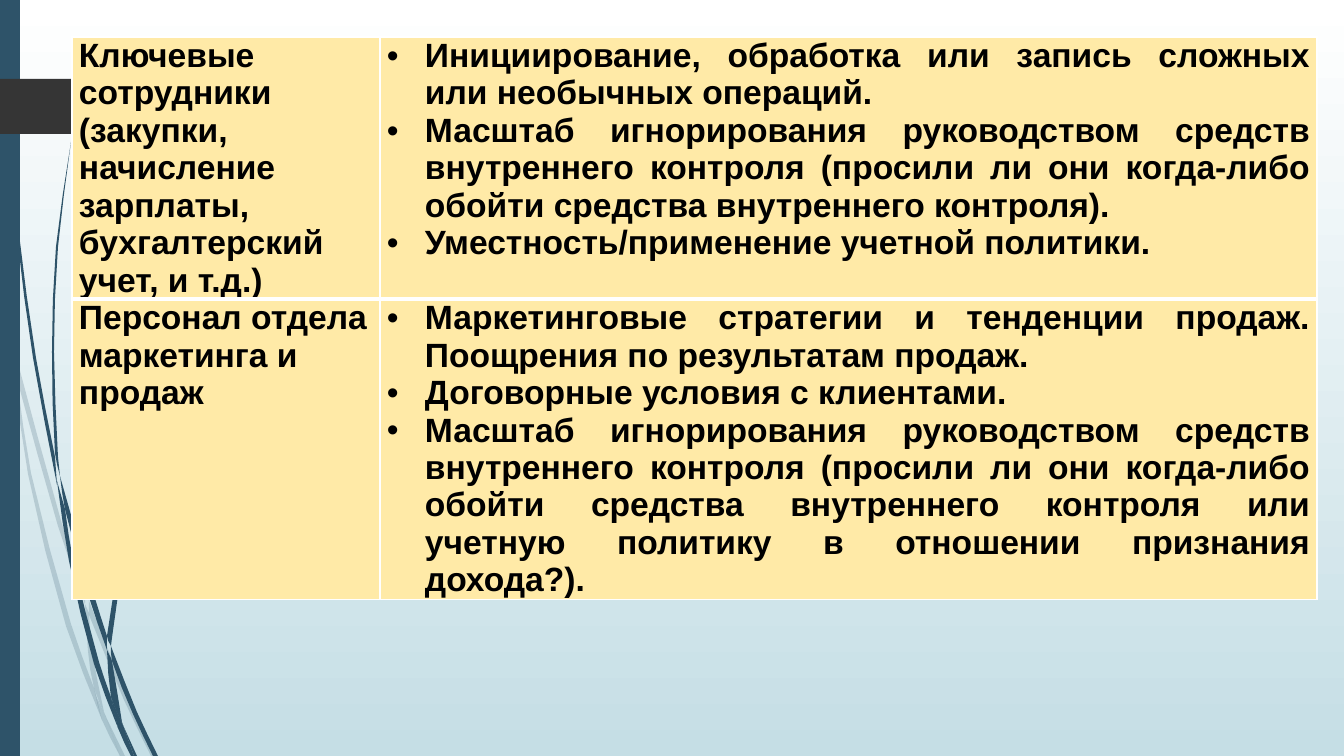
from dataclasses import dataclass
from math import dist

from lxml.etree import SubElement
from pptx import Presentation
from pptx.dml.color import RGBColor
from pptx.enum.shapes import MSO_SHAPE
from pptx.enum.text import PP_ALIGN
from pptx.oxml.ns import qn
from pptx.util import Emu, Pt

# Content: who is asked, and about what
STAFF_TOPICS = [
    ("Ключевые сотрудники (закупки, начисление зарплаты, бухгалтерский учет, и т.д.)", [
        "Инициирование, обработка или запись сложных или необычных операций.",
        "Масштаб игнорирования руководством средств внутреннего контроля "
        "(просили ли они когда-либо обойти средства внутреннего контроля).",
        "Уместность/применение учетной политики.",
    ]),
    ("Персонал отдела маркетинга и продаж", [
        "Маркетинговые стратегии и тенденции продаж. Поощрения по результатам продаж.",
        "Договорные условия с клиентами.",
        "Масштаб игнорирования руководством средств внутреннего контроля "
        "(просили ли они когда-либо обойти средства внутреннего контроля или "
        "учетную политику в отношении признания дохода?).",
    ]),
]

# Grass blades in px: one edge, then the edge that leads back
PALE_BLADES = [
    ([(0, 284), (9, 325), (11, 353)], [(10, 347), (0, 301)]),
    ([(17, 379), (58, 526), (85, 604)], [(86, 591), (62, 524), (14, 348)]),
    ([(89, 615), (124, 700), (151, 756)], [(156, 756), (128, 698), (89, 601)]),
    ([(106, 717), (120, 756)], [(125, 756), (106, 717)]),
    ([(11, 353), (28, 474), (66, 626), (102, 720)],
     [(94, 688), (71, 624), (31, 473), (17, 379)]),
    ([(85, 604), (88, 651), (94, 688), (106, 717)], [(104, 712), (92, 651), (89, 613)]),
    ([(86, 591), (108, 465), (159, 351), (230, 246), (314, 154)],
     [(314, 155), (231, 247), (161, 352), (111, 466), (89, 601)]),
    ([(94, 688), (102, 720), (120, 756)], [(106, 717), (97, 698)]),
]
DARK_BLADES = [
    ([(3, 0), (7, 111), (17, 235), (33, 358), (57, 485)],
     [(55, 457), (36, 358), (19, 234), (8, 110), (4, 0)]),
    ([(60, 476), (65, 509), (89, 597), (107, 650)], [(107, 636), (94, 595), (60, 476)]),
    ([(111, 646), (112, 661), (133, 714), (153, 756)], [(158, 756), (137, 712), (114, 654)]),
    ([(57, 481), (69, 561), (94, 664), (118, 728)],
     [(111, 697), (99, 662), (73, 560), (65, 509)]),
    ([(71, 142), (56, 247), (52, 352), (55, 453), (60, 476)],
     [(58, 457), (54, 352), (58, 247), (71, 142)]),
    ([(123, 725), (134, 756)], [(137, 756), (123, 725)]),
    ([(111, 646), (107, 636), (123, 555), (157, 478), (206, 408), (262, 347)],
     [(263, 347), (207, 409), (159, 480), (126, 556), (112, 638)]),
    ([(107, 650), (111, 697), (123, 725)], [(122, 722), (112, 661), (110, 656)]),
    ([(111, 697), (118, 728), (131, 756)], [(134, 756), (123, 725), (117, 712)]),
]

# Places in px
SLIDE_SIZE = (1344, 756)
SIDE_BAR = (0, 0, 20, 756)
PAGE_TAG = (0, 79, 175, 55)
TABLE_CORNER = (72, 37)
COLUMN_WIDTHS = (308, 937)
ROW_HEIGHTS = (262, 300)
CELL_MARGIN = 7
BULLET_INDENT = 38
CURVE_STEPS = 2


@dataclass(frozen=True)
class Theme:
    sky_top: str = "FFFFFF"
    sky_bottom: str = "C5DEE5"
    grass: str = "2E5369"
    tag: str = "353535"
    cell: str = "FFEAA7"
    rule: str = "FFFFFF"
    text: str = "000000"
    font: str = "Arial"
    text_size: int = 24
    thin_rule: int = 1
    thick_rule: int = 3
    pale_opacity: int = 20


THEME = Theme()


def px(length):
    return Emu(round(length * 914400 / 100.8))


def rgb(code):
    return RGBColor.from_string(code)


def paint(shape, color, opacity=100):
    shape.shadow.inherit = False
    shape.fill.solid()
    shape.fill.fore_color.rgb = rgb(color)
    shape.line.fill.background()
    if opacity < 100:
        tint = shape._element.spPr.find(qn("a:solidFill")).find(qn("a:srgbClr"))
        SubElement(tint, qn("a:alpha"), val=str(opacity * 1000))


def smooth(edge):
    """Run a cubic curve through the points, with slopes taken from the neighbours."""
    slopes = []
    for i in range(len(edge)):
        near = edge[max(i - 1, 0):i + 2]
        length = sum(dist(a, b) for a, b in zip(near, near[1:]))
        slopes.append([(b - a) / length for a, b in zip(near[0], near[-1])])
    curve = [edge[0]]
    for i, (start, end) in enumerate(zip(edge, edge[1:])):
        length = dist(start, end)
        for step in range(1, CURVE_STEPS + 1):
            t = step / CURVE_STEPS
            curve.append(tuple(
                (2 * t**3 - 3 * t**2 + 1) * start[k] + (3 * t**2 - 2 * t**3) * end[k]
                + length * ((t**3 - 2 * t**2 + t) * slopes[i][k]
                            + (t**3 - t**2) * slopes[i + 1][k])
                for k in (0, 1)))
    return curve


def add_blade(slide, edges, opacity):
    outline = [(px(x), px(y)) for edge in edges for x, y in smooth(edge)]
    builder = slide.shapes.build_freeform(*outline[0], scale=1.0)
    builder.add_line_segments(outline[1:], close=True)
    paint(builder.convert_to_shape(), THEME.grass, opacity)


def style_cell(cell, row):
    top, bottom = ((THEME.thin_rule, THEME.thick_rule) if row == 0
                   else (THEME.thick_rule, THEME.thin_rule))
    borders = {"L": THEME.thin_rule, "R": THEME.thin_rule, "T": top, "B": bottom}
    properties = cell._tc.get_or_add_tcPr()
    for side, width in borders.items():
        line = SubElement(properties, qn("a:ln" + side), w=str(Pt(width)))
        SubElement(SubElement(line, qn("a:solidFill")), qn("a:srgbClr"), val=THEME.rule)
    cell.fill.solid()
    cell.fill.fore_color.rgb = rgb(THEME.cell)
    cell.margin_left = cell.margin_right = px(CELL_MARGIN)
    cell.margin_top = cell.margin_bottom = 0


def write_cell(cell, lines, bulleted):
    frame = cell.text_frame
    for i, line in enumerate(lines):
        paragraph = frame.add_paragraph() if i else frame.paragraphs[0]
        paragraph.text = line
        if bulleted:
            paragraph.alignment = PP_ALIGN.JUSTIFY
            properties = paragraph._p.get_or_add_pPr()
            properties.set("marL", str(px(BULLET_INDENT)))
            properties.set("indent", str(-px(BULLET_INDENT)))
            SubElement(properties, qn("a:buFont"), typeface=THEME.font)
            SubElement(properties, qn("a:buChar"), char="•")
        font = paragraph.font
        font.name, font.size, font.bold = THEME.font, Pt(THEME.text_size), True
        font.color.rgb = rgb(THEME.text)


def main():
    deck = Presentation()
    deck.slide_width, deck.slide_height = map(px, SLIDE_SIZE)
    slide = deck.slides.add_slide(deck.slide_layouts[6])

    # Sky
    sky = slide.background.fill
    sky.gradient()
    sky.gradient_angle = 270
    for stop, color in zip(sky.gradient_stops, (THEME.sky_top, THEME.sky_bottom)):
        stop.color.rgb = rgb(color)

    # Grass, side bar and page tag
    for blades, opacity in ((PALE_BLADES, THEME.pale_opacity), (DARK_BLADES, 100)):
        for edges in blades:
            add_blade(slide, edges, opacity)
    for kind, place, color in ((MSO_SHAPE.RECTANGLE, SIDE_BAR, THEME.grass),
                               (MSO_SHAPE.PENTAGON, PAGE_TAG, THEME.tag)):
        paint(slide.shapes.add_shape(kind, *map(px, place)), color)

    # Table of staff and topics
    size = (sum(COLUMN_WIDTHS), sum(ROW_HEIGHTS))
    table = slide.shapes.add_table(len(STAFF_TOPICS), len(COLUMN_WIDTHS),
                                   *map(px, TABLE_CORNER + size)).table
    table.first_row = table.horz_banding = False
    for column, width in zip(table.columns, COLUMN_WIDTHS):
        column.width = px(width)
    for row, (staff, topics) in enumerate(STAFF_TOPICS):
        table.rows[row].height = px(ROW_HEIGHTS[row])
        for col, lines in enumerate(([staff], topics)):
            cell = table.cell(row, col)
            style_cell(cell, row)
            write_cell(cell, lines, bulleted=col == 1)

    deck.save("out.pptx")


if __name__ == "__main__":
    main()
